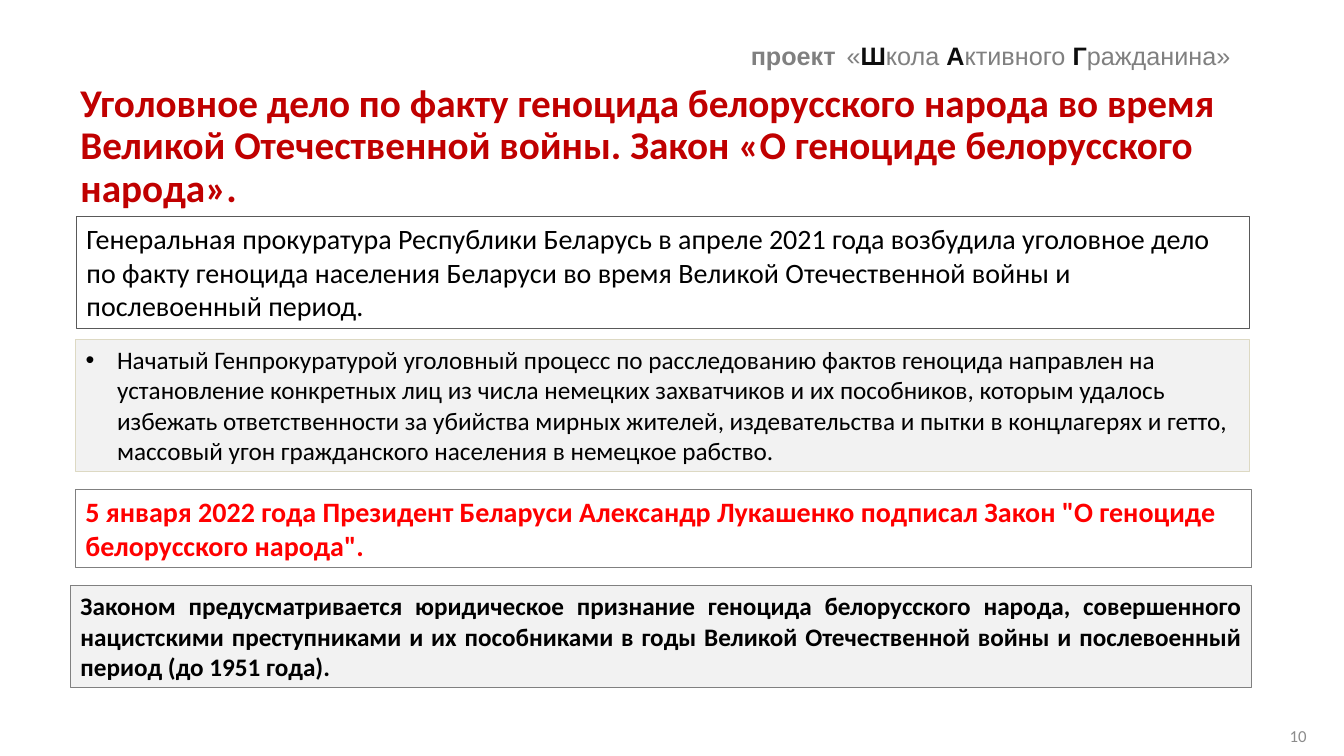
from lxml import etree
from pptx import Presentation
from pptx.dml.color import RGBColor
from pptx.enum.shapes import MSO_SHAPE
from pptx.enum.text import MSO_ANCHOR, PP_ALIGN
from pptx.oxml.ns import qn
from pptx.util import Pt

RECT = MSO_SHAPE.RECTANGLE
TOP, MIDDLE = MSO_ANCHOR.TOP, MSO_ANCHOR.MIDDLE
LEFT, RIGHT, JUSTIFY = PP_ALIGN.LEFT, PP_ALIGN.RIGHT, PP_ALIGN.JUSTIFY
WHITE = RGBColor(0xFF, 0xFF, 0xFF)
BLACK = RGBColor(0, 0, 0)
INK = RGBColor(0x0D, 0x0D, 0x0D)
GRAY = RGBColor(0x80, 0x80, 0x80)
DARK = RGBColor(0x59, 0x59, 0x59)
PALE = RGBColor(0xF2, 0xF2, 0xF2)
SAND = RGBColor(0xDD, 0xD9, 0xC3)
RED = RGBColor(0xFF, 0, 0)
MAROON = RGBColor(0xC0, 0, 0)
MUTED = RGBColor(0x8C, 0x8C, 0x8C)


def style(font, size, color, bold=False, name="Calibri"):
    font.name = name
    font.size = Pt(size)
    font.bold = bold
    font.color.rgb = color


def panel(text, box, fill, line, size, color, bold, align=LEFT, anchor=TOP, bullet=False):
    shape = slide.shapes.add_shape(RECT, *[Pt(v) for v in box])
    shape.shadow.inherit = False
    if fill is None:
        shape.fill.background()
    else:
        shape.fill.solid()
        shape.fill.fore_color.rgb = fill
    if line is None:
        shape.line.fill.background()
    else:
        shape.line.color.rgb = line
        shape.line.width = Pt(0.75)
    frame = shape.text_frame
    frame.word_wrap = True
    frame.vertical_anchor = anchor
    para = frame.paragraphs[0]
    para.text = text
    para.alignment = align
    if bullet:
        props = para._p.get_or_add_pPr()
        props.set("marL", str(Pt(22.5)))
        props.set("indent", str(Pt(-22.5)))
        etree.SubElement(props, qn("a:buFont")).set("typeface", "Arial")
        etree.SubElement(props, qn("a:buChar")).set("char", "•")
    style(para.font, size, color, bold)
    return para


deck = Presentation()
deck.slide_width = Pt(960)
deck.slide_height = Pt(540)
slide = deck.slides.add_slide(deck.slide_layouts[6])

header = slide.shapes.add_textbox(Pt(529.2), Pt(15.1), Pt(360.7), Pt(41))
header.text_frame.word_wrap = False
para = header.text_frame.paragraphs[0]
for text, size, color, bold in [
    ("проект", 18, GRAY, True),
    (" ", 28, GRAY, True),
    ("«", 18, GRAY, False),
    ("Ш", 18, INK, True),
    ("кола ", 18, GRAY, False),
    ("А", 18, INK, True),
    ("ктивного ", 18, GRAY, False),
    ("Г", 18, INK, True),
    ("ражданина»", 18, GRAY, False),
]:
    run = para.add_run()
    run.text = text
    style(run.font, size, color, bold, "Arial")

number = slide.shapes.add_textbox(Pt(771.1), Pt(513.4), Pt(169.2), Pt(23.8))
number.text_frame.word_wrap = True
number.text_frame.vertical_anchor = MIDDLE
para = number.text_frame.paragraphs[0]
para.text = "10"
para.alignment = RIGHT
style(para.font, 12, MUTED)

title = panel(
    "Уголовное дело по факту геноцида белорусского народа во время Великой "
    "Отечественной войны. Закон «О геноциде белорусского народа».",
    (50.4, 55.4, 871.2, 99.4), WHITE, None, 28, MAROON, True, anchor=MIDDLE)
title.line_spacing = 0.9

panel(
    "Начатый Генпрокуратурой уголовный процесс по расследованию фактов геноцида "
    "направлен на установление конкретных лиц из числа немецких захватчиков и их "
    "пособников, которым удалось избежать ответственности за убийства мирных жителей, "
    "издевательства и пытки в концлагерях и гетто, массовый угон гражданского "
    "населения в немецкое рабство.",
    (54, 242.6, 838.8, 94.5), PALE, SAND, 18, BLACK, False, bullet=True)
panel(
    "Генеральная прокуратура Республики Беларусь в апреле 2021 года возбудила "
    "уголовное дело по факту геноцида населения Беларуси во время Великой "
    "Отечественной войны и послевоенный период.",
    (54.7, 154.8, 838.1, 80), None, DARK, 20, BLACK, False)
panel(
    "5 января 2022 года Президент Беларуси Александр Лукашенко подписал Закон "
    "\"О геноциде белорусского народа\".",
    (54, 349.9, 840.2, 55.7), None, GRAY, 20, RED, True)
panel(
    "Законом предусматривается юридическое признание геноцида белорусского народа, "
    "совершенного нацистскими преступниками и их пособниками в годы Великой "
    "Отечественной войны и послевоенный период (до 1951 года).",
    (50.4, 418.3, 843.8, 72.7), PALE, GRAY, 18, BLACK, True, JUSTIFY)

deck.save("out.pptx")
